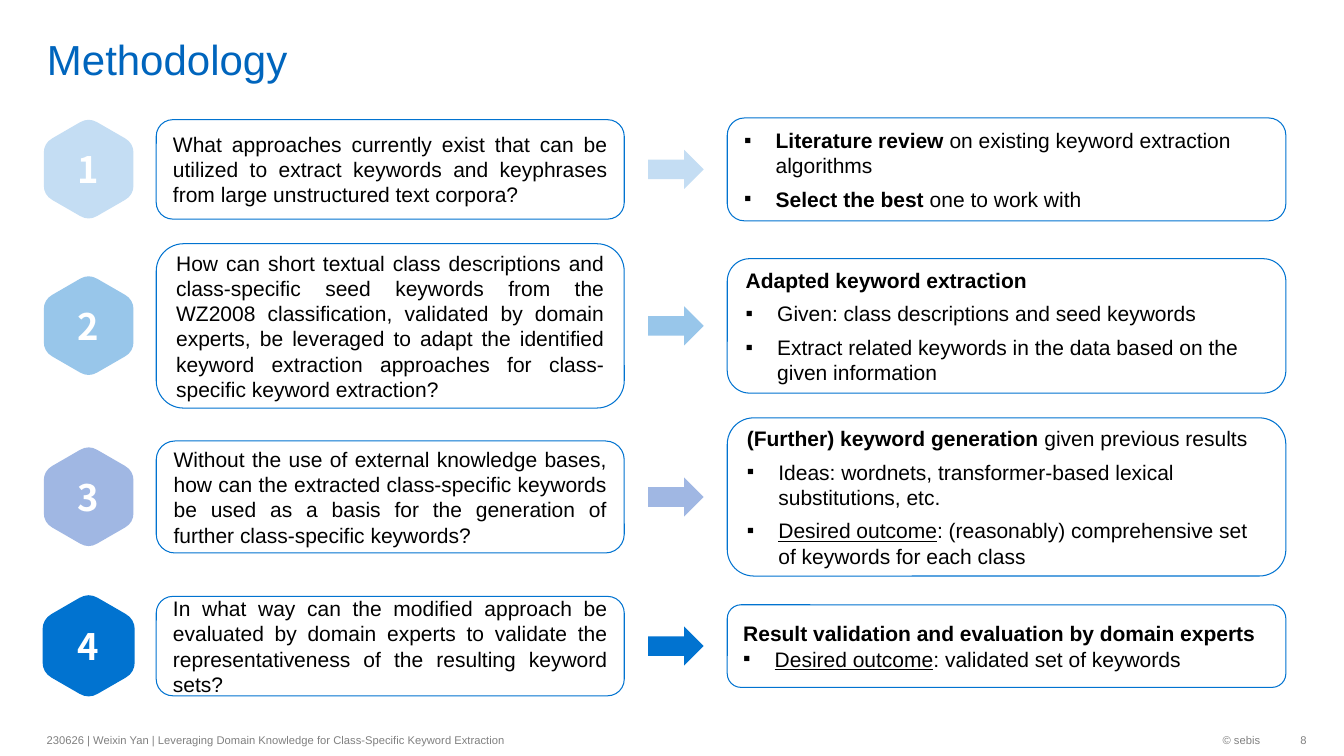
import math
from dataclasses import dataclass

from lxml import etree
from pptx import Presentation
from pptx import util as u
from pptx.dml import color
from pptx.enum import shapes, text
from pptx.oxml import ns


@dataclass(frozen=True)
class Theme:
    title: str = "0065BD"
    accent: str = "0173D0"
    body: str = "000000"
    footer: str = "808080"
    number: str = "FFFFFF"
    steps: tuple = ("C4DDF3", "98C6EA", "A0B7E3", "0173D0")
    font: str = "Arial"
    number_font: str = "Noto Sans CJK SC"
    title_size: float = 30
    body_size: float = 15
    number_size: float = 26
    footer_size: float = 8


THEME = Theme()
ALIGN = text.PP_ALIGN
BOLD = {"bold": True}
UNDERLINED = {"underline": True}

# Each step: centre, question height and text, answer height, space after, answer paragraphs.
# An answer paragraph is (bulleted, runs); a run is (words, format values).
STEPS = [
    (121, 71, "What approaches currently exist that can be utilized to extract keywords and "
     "keyphrases from large unstructured text corpora?", 73.5, 6, [
         (True, [("Literature review ", BOLD), ("on existing keyword extraction algorithms", {})]),
         (True, [("Select the best ", BOLD), ("one to work with", {})])]),
    (232.8, 117.4, "How can short textual class descriptions and class-specific seed keywords from "
     "the WZ2008 classification, validated by domain experts, be leveraged to adapt the "
     "identified keyword extraction approaches for class-specific keyword extraction?", 96, 6, [
         (False, [("Adapted keyword extraction", BOLD)]),
         (True, [("Given: class descriptions and seed keywords", {})]),
         (True, [("Extract related keywords in the data based on the given information", {})])]),
    (355, 80, "Without the use of external knowledge bases, how can the extracted class-specific "
     "keywords be used as a basis for the generation of further class-specific keywords?", 113, 6, [
         (False, [("(Further) keyword generation ", BOLD), ("given previous results", {})]),
         (True, [("Ideas: wordnets, transformer-based lexical substitutions, etc.", {})]),
         (True, [("Desired outcome", UNDERLINED),
                 (": (reasonably) comprehensive set of keywords for each class", {})])]),
    (461.5, 71, "In what way can the modified approach be evaluated by domain experts to validate "
     "the representativeness of the resulting keyword sets?", 59, 0, [
         (False, [("Result validation and evaluation by domain experts", BOLD)]),
         (True, [("Desired outcome", UNDERLINED), (": validated set of keywords", {})])]),
]


def set_values(target, values):
    for name, value in values.items():
        setattr(target, name, value)


def style_shape(shape, fill=None, line=None, width=0.75):
    shape.shadow.inherit = False
    if fill:
        shape.fill.solid()
        shape.fill.fore_color.rgb = color.RGBColor.from_string(fill)
    else:
        shape.fill.background()
    if line:
        shape.line.color.rgb = color.RGBColor.from_string(line)
        shape.line.width = u.Pt(width)
    else:
        shape.line.fill.background()


def add_bullet(paragraph):
    properties = paragraph._p.get_or_add_pPr()
    properties.set("marL", str(u.Pt(22.5)))
    properties.set("indent", str(-u.Pt(22.5)))
    etree.SubElement(properties, ns.qn("a:buFont")).set("typeface", THEME.font)
    etree.SubElement(properties, ns.qn("a:buChar")).set("char", "▪")


def write(shape, paragraphs, size, ink, font=THEME.font, align=ALIGN.LEFT, space_after=0,
          insets=(7.2, 3.6, 7.2, 3.6), anchor=text.MSO_ANCHOR.MIDDLE):
    frame = shape.text_frame
    sides = ("margin_left", "margin_top", "margin_right", "margin_bottom")
    set_values(frame, {"word_wrap": True, "vertical_anchor": anchor,
                       **{side: u.Pt(inset) for side, inset in zip(sides, insets)}})
    for index, (bulleted, runs) in enumerate(paragraphs):
        paragraph = frame.add_paragraph() if index else frame.paragraphs[0]
        if bulleted:
            add_bullet(paragraph)
        set_values(paragraph, {"alignment": align, "space_after": u.Pt(space_after)})
        for words, values in runs:
            run = paragraph.add_run()
            run.text = words
            set_values(run.font, {"name": font, "size": u.Pt(size), **values})
            run.font.color.rgb = color.RGBColor.from_string(ink)


def add_label(slide, box, words, size, ink, **options):
    shape = slide.shapes.add_textbox(*map(u.Pt, box))
    write(shape, [(False, [(words, {})])], size, ink, **options)


def between(start, end, share):
    return tuple(a + (b - a) * share for a, b in zip(start, end))


def curve_segments(shape, controls):
    """Turn each line segment that has a control point into a quadratic curve."""
    lines = list(shape._element.iter(ns.qn("a:lnTo")))
    for line, control in zip(lines, controls):
        if control:
            line.tag = ns.qn("a:quadBezTo")
            point = etree.Element(ns.qn("a:pt"))
            point.set("x", str(u.Pt(control[0]) - shape.left))
            point.set("y", str(u.Pt(control[1]) - shape.top))
            line.insert(0, point)


def add_hexagon(slide, center_x, center_y, number, fill, line):
    """Regular hexagon with each corner rounded by two curves that meet at its middle."""
    radius, cut = 37, 0.19
    corners = [(center_x + radius * math.sin(math.radians(60 * i)),
                center_y - radius * math.cos(math.radians(60 * i))) for i in range(6)]
    points, controls = [], []
    for i, corner in enumerate(corners):
        start = between(corner, corners[i - 1], cut)
        end = between(corner, corners[(i + 1) % 6], cut)
        inward, outward = between(start, corner, 0.5), between(corner, end, 0.5)
        points += [start, between(inward, outward, 0.5), end]
        controls += [inward, outward, None]
    outline = [tuple(map(u.Pt, point)) for point in points]
    builder = slide.shapes.build_freeform(*outline[0])
    builder.add_line_segments(outline[1:], close=True)
    shape = builder.convert_to_shape()
    curve_segments(shape, controls)
    style_shape(shape, fill, line, 1.75)
    write(shape, [(False, [(str(number), BOLD)])], THEME.number_size, THEME.number,
          font=THEME.number_font, align=ALIGN.CENTER)


def add_card(slide, box, paragraphs, **options):
    shape = slide.shapes.add_shape(shapes.MSO_SHAPE.ROUNDED_RECTANGLE, *map(u.Pt, box))
    style_shape(shape, line=THEME.accent)
    write(shape, paragraphs, THEME.body_size, THEME.body, insets=(8.5,) * 4, **options)


def add_step(slide, left, number, step):
    """One row: numbered hexagon, question, arrow, answer, all on one centre line."""
    center, question_height, question, answer_height, space_after, answer = step
    fill = THEME.steps[number - 1]
    add_hexagon(slide, left + 31.8, center - 0.2, number, fill,
                fill if number == len(STEPS) else None)
    add_card(slide, (left + 80.1, center - question_height / 2, 334.3, question_height),
             [(False, [(question, {})])], align=ALIGN.JUSTIFY)
    arrow = slide.shapes.add_shape(shapes.MSO_SHAPE.RIGHT_ARROW,
                                   *map(u.Pt, (left + 431.5, center - 14, 39.6, 28)))
    style_shape(arrow, fill)
    add_card(slide, (left + 488, center - answer_height / 2, 399, answer_height),
             answer, space_after=space_after)


def add_footer(slide, top, height):
    labels = [
        (26.2, 454, "230626 | Weixin Yan | Leveraging Domain Knowledge for Class-Specific "
         "Keyword Extraction", ALIGN.LEFT, 7.2),
        (739, 168.3, "© sebis", ALIGN.RIGHT, 7.2),
        (907.3, 26, "8", ALIGN.RIGHT, 0),
    ]
    for left, width, words, align, right_inset in labels:
        add_label(slide, (left, top, width, height), words, THEME.footer_size, THEME.footer,
                  align=align, insets=(7.2, 3.6, right_inset, 3.6))


def main():
    presentation = Presentation()
    set_values(presentation, {"slide_width": u.Pt(960), "slide_height": u.Pt(540)})
    slide = presentation.slides.add_slide(presentation.slide_layouts[6])
    # Title
    add_label(slide, (26.5, 3, 834, 57), "Methodology", THEME.title_size, THEME.title,
              insets=(7.2, 0, 7.2, 0), anchor=text.MSO_ANCHOR.BOTTOM)
    # Research questions and their methods
    for number, step in enumerate(STEPS, 1):
        add_step(slide, 31.5, number, step)
    # Footer
    add_footer(slide, 517, 23)
    presentation.save("out.pptx")


if __name__ == "__main__":
    main()
